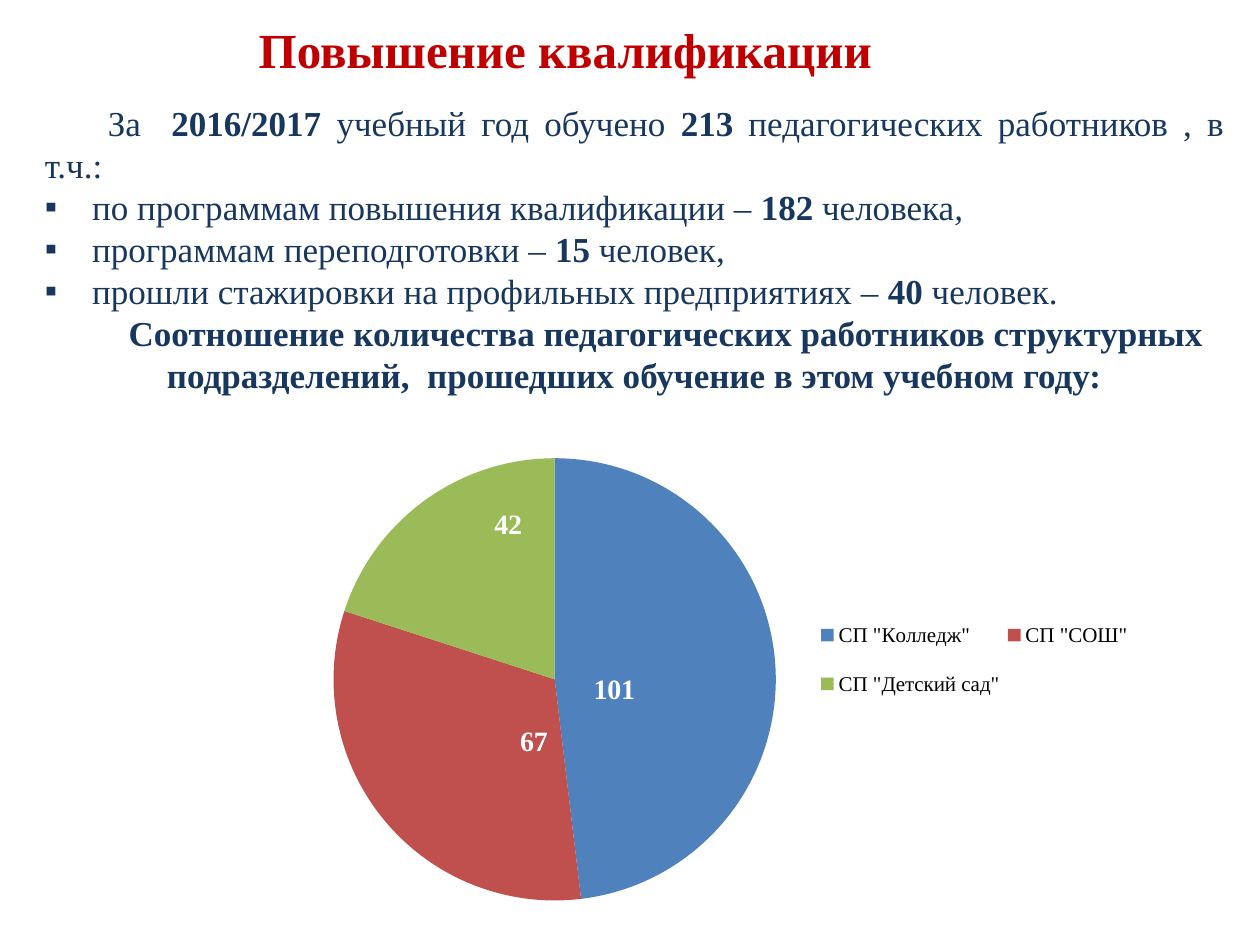
from dataclasses import dataclass
from lxml.etree import SubElement
from pptx import Presentation
from pptx.chart.data import CategoryChartData
from pptx.dml.color import RGBColor as RGB
from pptx.enum.chart import XL_CHART_TYPE as Kind, XL_LABEL_POSITION as Spot
from pptx.enum.chart import XL_LEGEND_POSITION as Side
from pptx.enum.text import MSO_ANCHOR as Anchor, PP_ALIGN as Align
from pptx.oxml import parse_xml
from pptx.oxml.ns import nsdecls, qn
from pptx.util import Pt


@dataclass(frozen=True)
class Theme:
    face: str = "Times New Roman"
    red: RGB = RGB(0xC0, 0x00, 0x00)
    navy: RGB = RGB(0x17, 0x37, 0x5E)
    white: RGB = RGB(0xFF, 0xFF, 0xFF)
    black: RGB = RGB(0x00, 0x00, 0x00)
    hues: tuple = (RGB(0x4F, 0x81, 0xBD), RGB(0xC0, 0x50, 0x4D), RGB(0x9B, 0xBB, 0x59))
    title: int = 28
    body: int = 20
    label: int = 16
    legend: int = 12


THEME = Theme()

INTRO = [("За  ", ""), ("2016/2017 ", "b"), ("учебный год обучено ", ""), ("213", "b"),
         (" педагогических работников , в т.ч.:", "")]
ITEMS = [
    [("по программам повышения квалификации – ", ""), ("182", "b"),
     (" человека", ""), (", ", "i")],
    [("программам переподготовки – ", ""), ("15", "b"), (" человек, ", "")],
    [("прошли стажировки на профильных предприятиях – ", ""), ("40", "b"),
     (" человек. ", "")],
]
RATIO = [("Соотношение количества педагогических работников структурных "
          "подразделений,  прошедших обучение в этом учебном году:", "b")]

# name, count, shift of the label from the middle of its slice
UNITS = [
    ('СП "Колледж"', 101, (-0.055, 0.035)),
    ('СП "СОШ"', 67, (0.07, -0.015)),
    ('СП "Детский сад"', 42, (0.02, -0.13)),
]


def style(font, size, color, bold=False, italic=False):
    font.name, font.size = THEME.face, Pt(size)
    font.bold, font.italic = bold, italic
    font.color.rgb = color


def add_box(slide, left, top, width, height, anchor=Anchor.TOP):
    frame = slide.shapes.add_textbox(Pt(left), Pt(top), Pt(width), Pt(height)).text_frame
    frame.word_wrap = True
    frame.vertical_anchor = anchor
    return frame


def write(para, runs, size, color, align):
    para.alignment = align
    for text, marks in runs:
        run = para.add_run()
        run.text = text
        style(run.font, size, color, "b" in marks, "i" in marks)


def indent(para, left, first, bullet=None):
    props = para._p.get_or_add_pPr()
    props.set("marL", str(Pt(left)))
    props.set("indent", str(Pt(first)))
    if bullet:
        SubElement(props, qn("a:buFont"), typeface="Arial")
        SubElement(props, qn("a:buChar"), char=bullet)


def add_body(slide):
    frame = add_box(slide, 18.5, 54.5, 688, 177)
    rows = [(INTRO, Align.JUSTIFY, (0, 36))]
    rows += [(item, Align.JUSTIFY, (27, -27, "▪")) for item in ITEMS]
    rows.append((RATIO, Align.CENTER, (0, 36)))
    for i, (runs, align, shape) in enumerate(rows):
        para = frame.add_paragraph() if i else frame.paragraphs[0]
        indent(para, *shape)
        write(para, runs, THEME.body, THEME.navy, align)


def layout(**values):
    """Manual chart layout, in fractions of the chart."""
    tags = "".join(f'<c:{tag} val="{val}"/>' for tag, val in values.items())
    return parse_xml(f'<c:layout {nsdecls("c")}><c:manualLayout>{tags}'
                     '</c:manualLayout></c:layout>')


def place(x, y, w, h, **inner):
    return layout(**inner, xMode="edge", yMode="edge", x=x, y=y, w=w, h=h)


def add_pie(slide):
    data = CategoryChartData()
    data.categories = [name for name, _, _ in UNITS]
    data.add_series("Series 1", [count for _, count, _ in UNITS])
    chart = slide.shapes.add_chart(Kind.PIE, Pt(122), Pt(242), Pt(527), Pt(284), data).chart
    chart.has_title = False
    style(chart.font, THEME.legend, THEME.black)
    area = chart.plots[0]._element.getparent()
    for old in area.findall(qn("c:layout")):
        area.remove(old)
    area.insert(0, place(0.13, 0.07, 0.48, 0.89, layoutTarget="inner"))

    chart.has_legend = True
    legend = chart.legend
    legend.position = Side.RIGHT
    legend.include_in_layout = False
    style(legend.font, THEME.legend, THEME.black)
    for old in legend._element.findall(qn("c:layout")):
        legend._element.remove(old)
    legend._element.find(qn("c:legendPos")).addnext(place(0.65, 0.35, 0.35, 0.25))

    plot = chart.plots[0]
    plot.vary_by_categories = True
    for i, (_, _, (x, y)) in enumerate(UNITS):
        point = plot.series[0].points[i]
        point.format.fill.solid()
        point.format.fill.fore_color.rgb = THEME.hues[i]
        label = point.data_label
        style(label.font, THEME.label, THEME.white, bold=True)
        label.position = Spot.CENTER
        mark = label._get_or_add_dLbl()
        mark.find(qn("c:idx")).addnext(layout(x=x, y=y))


def main():
    deck = Presentation()
    deck.slide_width, deck.slide_height = Pt(720), Pt(540)
    slide = deck.slides.add_slide(deck.slide_layouts[6])
    title = add_box(slide, 122, 0, 402, 55.5, Anchor.MIDDLE)
    write(title.paragraphs[0], [("Повышение квалификации", "b")],
          THEME.title, THEME.red, Align.CENTER)
    add_body(slide)
    add_pie(slide)
    deck.save("out.pptx")


if __name__ == "__main__":
    main()
